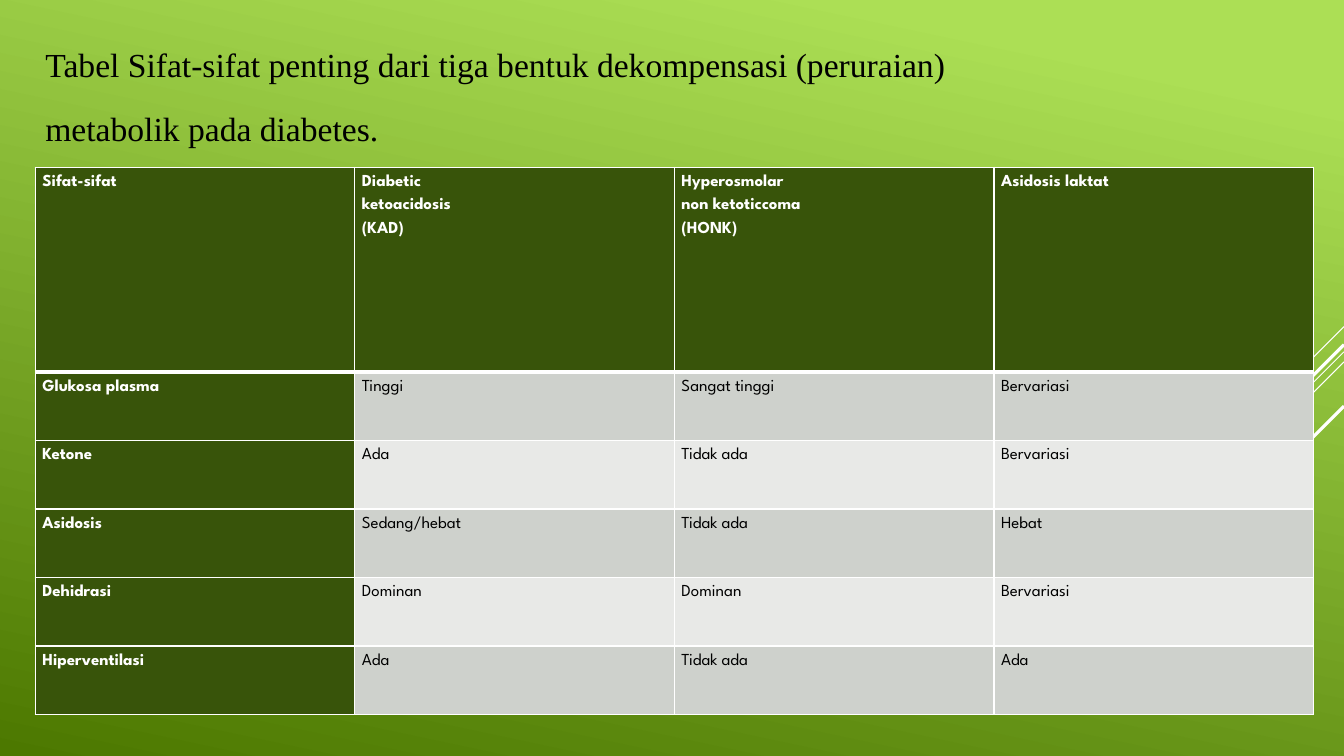
import pptx
import pptx.util
import pptx.dml.color
import pptx.enum.shapes
import pptx.enum.text
import pptx.oxml
import pptx.oxml.ns
from lxml import etree

Inches = pptx.util.Inches
Pt = pptx.util.Pt
RGBColor = pptx.dml.color.RGBColor
JUSTIFY = pptx.enum.text.PP_ALIGN.JUSTIFY

TITLE = (
    "Tabel Sifat-sifat penting dari tiga bentuk dekompensasi (peruraian)\n"
    "metabolik pada diabetes."
)
ROWS = [
    ("Sifat-sifat", "Diabetic\nketoacidosis\n(KAD)",
     "Hyperosmolar\nnon ketoticcoma\n(HONK)", "Asidosis laktat"),
    ("Glukosa plasma", "Tinggi", "Sangat tinggi", "Bervariasi"),
    ("Ketone", "Ada", "Tidak ada", "Bervariasi"),
    ("Asidosis", "Sedang/hebat", "Tidak ada", "Hebat"),
    ("Dehidrasi", "Dominan", "Dominan", "Bervariasi"),
    ("Hiperventilasi", "Ada", "Tidak ada", "Ada"),
]
DIAGONALS = [(3.24, 1.0, 0.75), (3.49, 3.26, 0.75), (3.59, 2.07, 0.75),
             (3.42, 1.91, 2.25), (4.03, 1.39, 2.25)]

WHITE = RGBColor(0xFF, 0xFF, 0xFF)
BLACK = RGBColor(0x00, 0x00, 0x00)
LIME = RGBColor(0xAC, 0xDF, 0x55)
FOREST = RGBColor(0x4C, 0x78, 0x00)
OLIVE = RGBColor(0x38, 0x54, 0x0A)
BANDS = [RGBColor(0xE8, 0xE9, 0xE7), RGBColor(0xCE, 0xD1, 0xCC)]

SLIDE_WIDTH, SLIDE_HEIGHT = 13.33, 7.5
COLUMN_WIDTH, HEADER_HEIGHT, ROW_HEIGHT = 3.17, 2.03, 0.68
LEFT, TABLE_TOP = 0.35, 1.66


def paint_background(slide):
    fill = slide.background.fill
    fill.gradient()
    fill.gradient_angle = 258
    for stop, color, position in zip(fill.gradient_stops, (LIME, FOREST), (0.1, 1.0)):
        stop.color.rgb = color
        stop.position = position


def add_diagonal(slide, top, reach, width):
    line = slide.shapes.add_connector(
        pptx.enum.shapes.MSO_CONNECTOR.STRAIGHT,
        Inches(SLIDE_WIDTH), Inches(top),
        Inches(SLIDE_WIDTH - reach), Inches(top + reach))
    line.line.color.rgb = WHITE
    line.line.width = Pt(width)
    etree.SubElement(line._element.spPr, pptx.oxml.ns.qn("a:effectLst"))


def format_title(title):
    title.left, title.top = Inches(LEFT), Inches(0.19)
    title.width, title.height = Inches(11.84), Inches(1.92)
    frame = title.text_frame
    frame.text = TITLE
    frame.word_wrap = True
    frame.auto_size = pptx.enum.text.MSO_AUTO_SIZE.NONE
    frame.vertical_anchor = pptx.enum.text.MSO_ANCHOR.TOP
    for paragraph in frame.paragraphs:
        paragraph.alignment = JUSTIFY
        paragraph.line_spacing = 1.5
        paragraph.space_before = Pt(2)
        paragraph.font.name = "Times New Roman"
        paragraph.font.size = Pt(24)
        paragraph.font.color.rgb = BLACK


def set_borders(cell, widths):
    properties = cell._tc.get_or_add_tcPr()
    for index, (side, width) in enumerate(widths.items()):
        border = pptx.oxml.parse_xml(
            f'<a:{side} {pptx.oxml.ns.nsdecls("a")} w="{Pt(width)}">'
            f'<a:solidFill><a:srgbClr val="{WHITE}"/></a:solidFill></a:{side}>')
        properties.insert(index, border)


def format_cell(cell, text, row, column):
    is_heading = row == 0 or column == 0
    cell.text = text
    cell.margin_left = cell.margin_right = Inches(0.07)
    cell.margin_top = cell.margin_bottom = 0
    cell.fill.solid()
    cell.fill.fore_color.rgb = OLIVE if is_heading else BANDS[row % 2]
    set_borders(cell, {"lnL": 1, "lnR": 1,
                       "lnT": 3 if row == 1 else 1,
                       "lnB": 3 if row == 0 else 1})
    for paragraph in cell.text_frame.paragraphs:
        paragraph.alignment = JUSTIFY
        paragraph.line_spacing = 1.5
        paragraph.font.name = "League Spartan"
        paragraph.font.size = Pt(12)
        paragraph.font.bold = is_heading
        paragraph.font.color.rgb = WHITE if is_heading else BLACK


def add_comparison_table(slide):
    heights = [HEADER_HEIGHT] + [ROW_HEIGHT] * (len(ROWS) - 1)
    column_count = len(ROWS[0])
    table = slide.shapes.add_table(
        len(ROWS), column_count, Inches(LEFT), Inches(TABLE_TOP),
        Inches(COLUMN_WIDTH * column_count), Inches(sum(heights))).table
    table.first_col = True
    for column in table.columns:
        column.width = Inches(COLUMN_WIDTH)
    for row, (height, texts) in enumerate(zip(heights, ROWS)):
        table.rows[row].height = Inches(height)
        for column, text in enumerate(texts):
            format_cell(table.cell(row, column), text, row, column)


def main():
    presentation = pptx.Presentation()
    presentation.slide_width = Inches(SLIDE_WIDTH)
    presentation.slide_height = Inches(SLIDE_HEIGHT)
    slide = presentation.slides.add_slide(presentation.slide_layouts[5])
    paint_background(slide)
    for diagonal in DIAGONALS:
        add_diagonal(slide, *diagonal)
    format_title(slide.shapes.title)
    add_comparison_table(slide)
    presentation.save("out.pptx")


if __name__ == "__main__":
    main()
